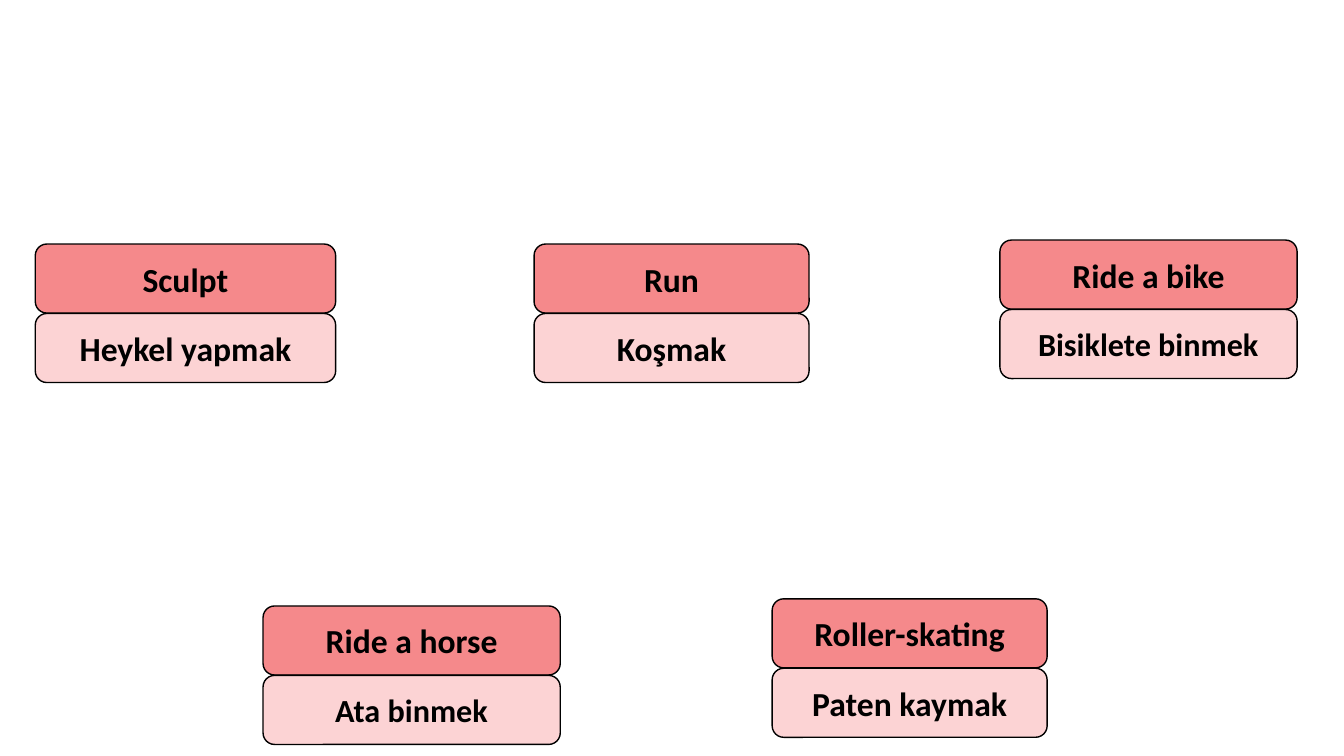
from pptx import Presentation
from pptx.dml.color import RGBColor
from pptx.enum.shapes import MSO_SHAPE
from pptx.enum.text import MSO_ANCHOR, PP_ALIGN
from pptx.util import Cm, Pt


def colour(code):
    return RGBColor.from_string(code)


class VocabularySlide:
    ENGLISH_FILL = "F5898B"
    TURKISH_FILL = "FCD3D4"
    INK = "000000"
    LABEL_HEIGHT = 1.74
    LABEL_STEP = 1.75

    def __init__(self, deck):
        self.slide = deck.slides.add_slide(deck.slide_layouts[6])

    def label(self, wording, left, top, width, fill, size):
        box = self.slide.shapes.add_shape(
            MSO_SHAPE.ROUNDED_RECTANGLE,
            Cm(left), Cm(top), Cm(width), Cm(self.LABEL_HEIGHT),
        )
        box.shadow.inherit = False
        box.fill.solid()
        box.fill.fore_color.rgb = colour(fill)
        box.line.color.rgb = colour(self.INK)
        box.line.width = Pt(1)
        frame = box.text_frame
        frame.word_wrap = True
        frame.vertical_anchor = MSO_ANCHOR.MIDDLE
        paragraph = frame.paragraphs[0]
        paragraph.alignment = PP_ALIGN.CENTER
        run = paragraph.add_run()
        run.text = wording
        font_format = {"name": "Calibri", "size": Pt(size), "bold": True}
        for attribute, value in font_format.items():
            setattr(run.font, attribute, value)
        run.font.color.rgb = colour(self.INK)

    def word_pair(self, english, turkish, left, top, width, turkish_size):
        self.label(english, left, top, width, self.ENGLISH_FILL, 24)
        self.label(turkish, left, top + self.LABEL_STEP, width,
                   self.TURKISH_FILL, turkish_size)


def main():
    deck = Presentation()
    deck.slide_width, deck.slide_height = Cm(33.87), Cm(19.05)
    vocabulary = VocabularySlide(deck)
    hobbies = [
        ("Sculpt", "Heykel yapmak", 0.89, 6.15, 7.57, 24),
        ("Run", "Koşmak", 13.46, 6.15, 6.93, 24),
        ("Ride a bike", "Bisiklete binmek", 25.2, 6.05, 7.49, 23),
        ("Ride a horse", "Ata binmek", 6.63, 15.27, 7.49, 23),
        ("Roller-skating", "Paten kaymak", 19.46, 15.09, 6.93, 24),
    ]
    for hobby in hobbies:
        vocabulary.word_pair(*hobby)
    deck.save("out.pptx")


if __name__ == "__main__":
    main()
